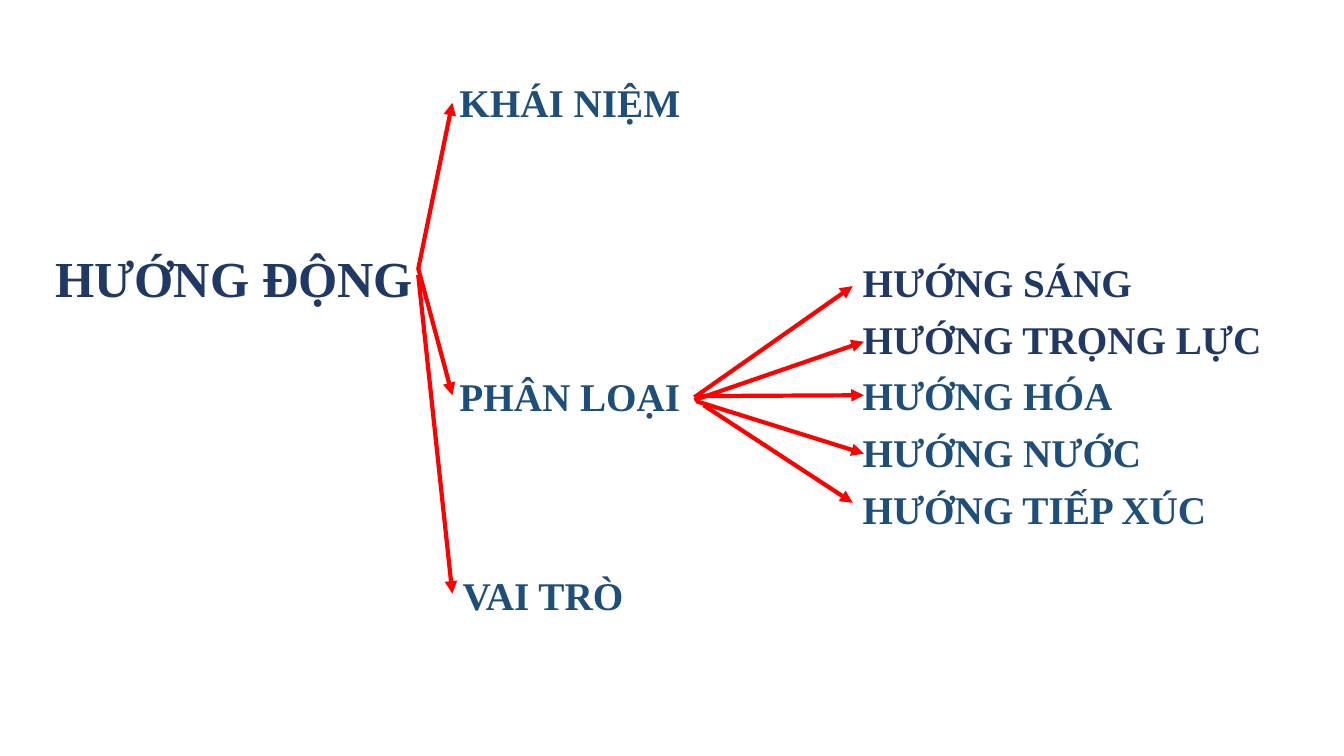
import pptx
import pptx.util
import pptx.dml.color
import pptx.enum.shapes
import pptx.enum.text
from lxml import etree
from pptx.util import Cm

NAVY = pptx.dml.color.RGBColor(0x20, 0x38, 0x64)
BLUE = pptx.dml.color.RGBColor(0x1F, 0x4E, 0x79)
RED = pptx.dml.color.RGBColor(0xFF, 0x00, 0x00)
NS = "{http://schemas.openxmlformats.org/drawingml/2006/main}"

prs = pptx.Presentation()
prs.slide_width, prs.slide_height = Cm(33.87), Cm(19.05)
s = prs.slides.add_slide(prs.slide_layouts[6])


def add_label(text, left, middle, width, size, color):
    height = 1.4
    sp = s.shapes.add_textbox(Cm(left), Cm(middle - height / 2), Cm(width), Cm(height))
    tf = sp.text_frame
    tf.word_wrap = True
    tf.vertical_anchor = pptx.enum.text.MSO_ANCHOR.MIDDLE
    tf.margin_left = tf.margin_right = tf.margin_top = tf.margin_bottom = 0
    tf.text = text
    font = tf.paragraphs[0].runs[0].font
    font.name = "Times New Roman"
    font.size = pptx.util.Pt(size)
    font.bold = True
    font.color.rgb = color


def add_arrow(x1, y1, x2, y2):
    line = s.shapes.add_connector(
        pptx.enum.shapes.MSO_CONNECTOR.STRAIGHT, Cm(x1), Cm(y1), Cm(x2), Cm(y2))
    line.line.color.rgb = RED
    line.line.width = pptx.util.Pt(3)
    etree.SubElement(line.line._get_or_add_ln(), NS + "tailEnd", type="triangle")
    etree.SubElement(line._element.spPr, NS + "effectLst")


add_label("HƯỚNG ĐỘNG", 1.4, 6.98, 9.6, 36, NAVY)

branches = [("KHÁI NIỆM", 11.58, 2.57), ("PHÂN LOẠI", 11.58, 9.98), ("VAI TRÒ", 11.66, 15)]
for text, left, middle in branches:
    add_label(text, left, middle, 5.9, 28, BLUE)

types = [
    ("HƯỚNG SÁNG", NAVY),
    ("HƯỚNG TRỌNG LỰC", NAVY),
    ("HƯỚNG HÓA", BLUE),
    ("HƯỚNG NƯỚC", BLUE),
    ("HƯỚNG TIẾP XÚC", BLUE),
]
for i, (text, color) in enumerate(types):
    add_label(text, 21.74, 7.1 + 1.43 * i, 11, 28, color)

type_arrows = [
    (17.5, 10.01, 21.49, 7.21),
    (17.5, 10.08, 21.77, 8.61),
    (17.65, 9.98, 21.77, 9.96),
    (17.55, 10.11, 21.77, 11.43),
    (17.73, 10.21, 21.49, 12.67),
]
for ends in type_arrows:
    add_arrow(*ends)

for start_y, end_y in [(6.78, 2.59), (6.76, 9.96), (6.93, 14.96)]:
    add_arrow(10.54, start_y, 11.4, end_y)

prs.save("out.pptx")
